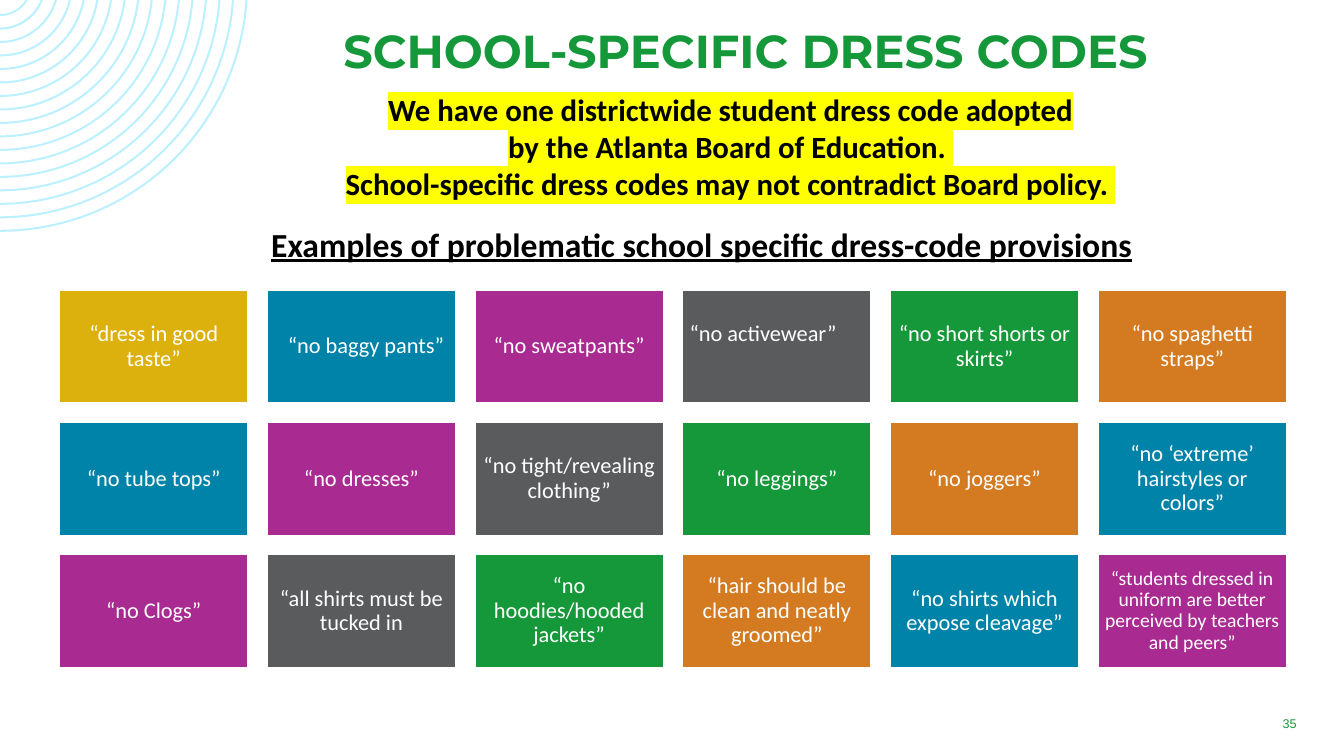
from dataclasses import dataclass
from math import acos, degrees, sqrt

from lxml.etree import SubElement
from pptx import Presentation
from pptx.dml.color import RGBColor
from pptx.enum.shapes import MSO_SHAPE
from pptx.enum.text import MSO_ANCHOR, MSO_AUTO_SIZE, PP_ALIGN
from pptx.oxml.ns import qn
from pptx.slide import Slide
from pptx.text.text import TextFrame
from pptx.util import Inches, Pt

WHITE = RGBColor(0xFF, 0xFF, 0xFF)
BLACK = RGBColor(0x00, 0x00, 0x00)
PALE_BLUE = RGBColor(0xBB, 0xF0, 0xFF)
YELLOW = RGBColor(0xFF, 0xFF, 0x00)
GOLD = RGBColor(0xDC, 0xB1, 0x0E)
BLUE = RGBColor(0x00, 0x83, 0xA9)
MAGENTA = RGBColor(0xA9, 0x2A, 0x91)
GRAY = RGBColor(0x59, 0x5B, 0x5D)
GREEN = RGBColor(0x15, 0x98, 0x39)
ORANGE = RGBColor(0xD4, 0x7B, 0x22)
TILE_COLORS = (BLUE, MAGENTA, GRAY, GREEN, ORANGE)

TILE_COLUMNS = 6
TILE_LEFT, TILE_TOP = 0.59, 2.88
TILE_WIDTH, TILE_HEIGHT = 1.87, 1.12
COLUMN_STEP, ROW_STEP = 2.06, 1.31

RING_COUNT = 17
RING_CENTER_Y = -0.16
RING_OUTER_RADIUS = 2.46
RING_STEP = 2.14 / 16
RING_THICKNESS = 0.02
ANGLE_UNITS = 60000


@dataclass(frozen=True)
class Tile:
    text: str
    size: float = 16
    align: PP_ALIGN = PP_ALIGN.CENTER
    inset: float = 0.07
    extra_left: float = 0
    extra_bottom: float = 0


TILES = (
    Tile("“dress in good taste”"),
    Tile("“no baggy pants”", extra_left=0.09),
    Tile("“no sweatpants”"),
    Tile("“no activewear”", align=PP_ALIGN.LEFT, extra_bottom=0.24),
    Tile("“no short shorts or skirts”"),
    Tile("“no spaghetti straps”"),
    Tile("“no tube tops”"),
    Tile("“no dresses”"),
    Tile("“no tight/revealing clothing”"),
    Tile("“no leggings”"),
    Tile("“no joggers”"),
    Tile("“no ‘extreme’ hairstyles or colors”"),
    Tile("“no Clogs”"),
    Tile("“all shirts must be tucked in"),
    Tile("“no hoodies/hooded jackets”"),
    Tile("“hair should be clean and neatly groomed”"),
    Tile("“no shirts which expose cleavage”"),
    Tile("“students dressed in uniform are better perceived by teachers and peers”",
         size=14, inset=0.06),
)


def write_text(frame: TextFrame, *lines: str, size: float, color: RGBColor,
               font_name: str = "Calibri", bold: bool = False, underline: bool = False,
               highlight: RGBColor | None = None, align: PP_ALIGN = PP_ALIGN.CENTER,
               line_spacing: float = 1.0, space_after: float = 0,
               anchor: MSO_ANCHOR = MSO_ANCHOR.TOP) -> None:
    frame.word_wrap = True
    frame.auto_size = MSO_AUTO_SIZE.NONE
    frame.vertical_anchor = anchor
    for index, line in enumerate(lines):
        paragraph = frame.paragraphs[0] if index == 0 else frame.add_paragraph()
        paragraph.alignment = align
        paragraph.line_spacing = line_spacing
        paragraph.space_after = Pt(space_after)
        run = paragraph.add_run()
        run.text = line
        font = run.font
        font.size, font.bold, font.underline = Pt(size), bold, underline
        font.color.rgb = color
        if highlight is not None:
            mark = SubElement(run._r.get_or_add_rPr(), qn("a:highlight"))
            SubElement(mark, qn("a:srgbClr"), val=str(highlight))
        font.name = font_name


def add_text_box(slide: Slide, left: float, top: float, width: float,
                 height: float) -> TextFrame:
    box = slide.shapes.add_textbox(Inches(left), Inches(top), Inches(width), Inches(height))
    return box.text_frame


def bend_line(line, radius: float, outward: bool) -> None:
    """Turn a straight path segment into an arc about the ring center."""
    sweep = round(degrees(acos(-RING_CENTER_Y / radius)) * ANGLE_UNITS)
    down = 90 * ANGLE_UNITS
    start, turn = (down, -sweep) if outward else (down - sweep, sweep)
    arc = SubElement(line.getparent(), qn("a:arcTo"), wR=str(Inches(radius)),
                     hR=str(Inches(radius)), stAng=str(start), swAng=str(turn))
    line.getparent().replace(line, arc)


def add_rings(slide: Slide) -> None:
    radii = [RING_OUTER_RADIUS - index * RING_STEP for index in range(RING_COUNT)]
    builder = None
    for radius in radii:
        inner = radius - RING_THICKNESS
        (outer_right, inner_right) = (Inches(sqrt(r ** 2 - RING_CENTER_Y ** 2))
                                      for r in (radius, inner))
        start = (0, Inches(RING_CENTER_Y + radius))
        if builder is None:
            builder = slide.shapes.build_freeform(*start)
        else:
            builder.move_to(*start)
        builder.add_line_segments([(outer_right, 0), (inner_right, 0),
                                   (0, Inches(RING_CENTER_Y + inner))], close=True)
    rings = builder.convert_to_shape()
    lines = list(rings.element.iter(qn("a:lnTo")))
    for radius, outer_line, inner_line in zip(radii, lines[0::3], lines[2::3]):
        bend_line(outer_line, radius, outward=True)
        bend_line(inner_line, radius - RING_THICKNESS, outward=False)
    rings.shadow.inherit = False
    rings.fill.solid()
    rings.fill.fore_color.rgb = PALE_BLUE
    rings.line.fill.background()
    slide.shapes.title.element.addprevious(rings.element)


def add_tile(slide: Slide, tile: Tile, index: int) -> None:
    row, column = divmod(index, TILE_COLUMNS)
    shape = slide.shapes.add_shape(
        MSO_SHAPE.RECTANGLE, Inches(TILE_LEFT + column * COLUMN_STEP),
        Inches(TILE_TOP + row * ROW_STEP), Inches(TILE_WIDTH), Inches(TILE_HEIGHT))
    shape.shadow.inherit = False
    shape.fill.solid()
    shape.fill.fore_color.rgb = TILE_COLORS[(index - 1) % len(TILE_COLORS)] if index else GOLD
    shape.line.color.rgb = WHITE
    shape.line.width = Pt(1)
    frame = shape.text_frame
    frame.margin_left = Inches(tile.inset + tile.extra_left)
    frame.margin_bottom = Inches(tile.inset + tile.extra_bottom)
    frame.margin_right = frame.margin_top = Inches(tile.inset)
    write_text(frame, tile.text, size=tile.size, color=WHITE, align=tile.align,
               line_spacing=0.9, anchor=MSO_ANCHOR.MIDDLE)


def main() -> None:
    presentation = Presentation()
    presentation.slide_width, presentation.slide_height = Inches(13.33), Inches(7.5)
    slide = presentation.slides.add_slide(presentation.slide_layouts[5])
    add_rings(slide)

    title = slide.shapes.title
    title.left, title.top = Inches(1.56), Inches(0.17)
    title.width, title.height = Inches(11.67), Inches(0.84)
    write_text(title.text_frame, "SCHOOL-SPECIFIC DRESS CODES", size=33, color=GREEN,
               font_name="Montserrat", bold=True)

    write_text(add_text_box(slide, 12.25, 7.03, 1.08, 0.3), "35", size=9, color=GREEN,
               font_name="Arial", space_after=6, anchor=MSO_ANCHOR.MIDDLE)
    for index, tile in enumerate(TILES):
        add_tile(slide, tile, index)

    write_text(add_text_box(slide, 1.7, 0.85, 11.09, 1.21),
               "We have one districtwide student dress code adopted",
               "by the Atlanta Board of Education. ",
               "School-specific dress codes may not contradict Board policy. ",
               size=22, color=BLACK, bold=True, highlight=YELLOW)
    write_text(add_text_box(slide, 0.88, 2.17, 12.16, 0.5),
               "Examples of problematic school specific dress-code provisions",
               size=24, color=BLACK, bold=True, underline=True)
    presentation.save("out.pptx")


if __name__ == "__main__":
    main()
